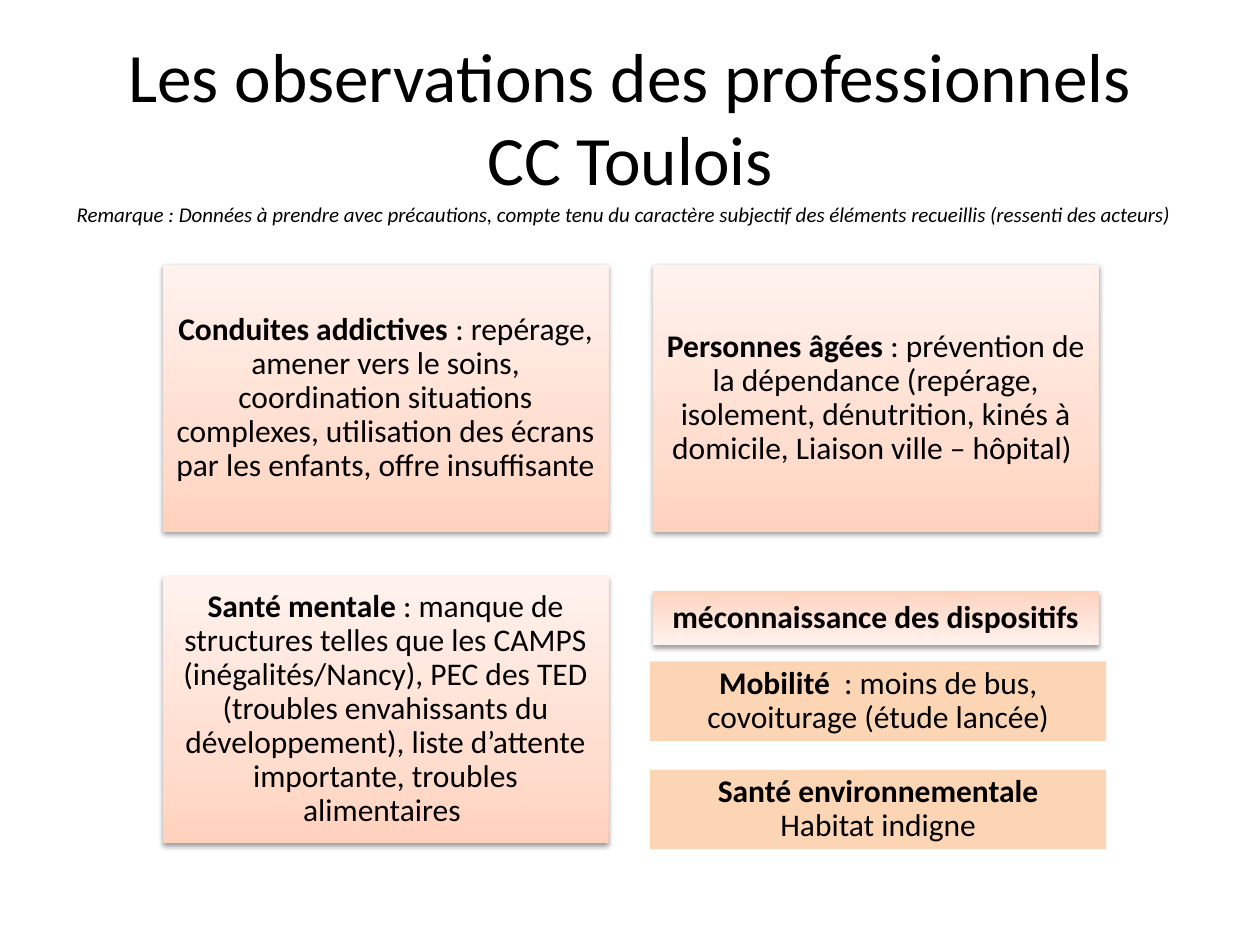
from lxml import etree
from pptx import Presentation, util as u
from pptx.dml.color import RGBColor
from pptx.enum import shapes, text
from pptx.oxml.ns import qn

TITLE = "Les observations des professionnels\vCC Toulois"
REMARK = ("Remarque : Données à prendre avec précautions, compte tenu du caractère "
          "subjectif des éléments recueillis (ressenti des acteurs)")

# column, row, bold heading, remaining text
CARDS = [
    (0, 0, "Conduites addictives ",
     ": repérage, amener vers le soins, coordination situations complexes, "
     "utilisation des écrans par les enfants, offre insuffisante"),
    (1, 0, "Personnes âgées ",
     ": prévention de la dépendance (repérage, isolement, dénutrition, "
     "kinés à domicile, Liaison ville – hôpital) "),
    (0, 1, "Santé mentale ",
     ": manque de structures telles que les CAMPS (inégalités/Nancy), PEC des TED "
     "(troubles envahissants du développement), liste d’attente importante, "
     "troubles alimentaires "),
]
AWARENESS = "méconnaissance des dispositifs"
# heading, whether the rest starts on a new line, remaining text
NOTES = [
    ("Mobilité", False, "  : moins de bus, covoiturage (étude lancée)"),
    ("Santé environnementale", True, "Habitat indigne"),
]

FONT, BLACK, PEACH = "Calibri", "000000", "FCD5B5"
GRADIENT = [(0, "FFD2BD"), (35, "FFDED0"), (100, "FFF2ED")]
LEFT, TOP, CARD_W, CARD_H, GAP = 1.29, 2.1, 3.54, 2.12, 0.35
RIGHT = LEFT + CARD_W + GAP
NOTE_TOP, NOTE_PITCH = 5.25, 0.86

deck = Presentation()
deck.slide_width, deck.slide_height = u.Inches(10), u.Inches(7.5)
page = deck.slides.add_slide(deck.slide_layouts[6])


def inches(*values):
    return [u.Inches(value) for value in values]


def style(font, size, bold=False, italic=False):
    font.name, font.size = FONT, u.Pt(size)
    font.bold, font.italic = bold, italic
    font.color.rgb = RGBColor.from_string(BLACK)


def add_label(place, words, size, align, anchor, italic=False):
    frame = page.shapes.add_textbox(*inches(*place)).text_frame
    frame.word_wrap = True
    frame.vertical_anchor = anchor
    para = frame.paragraphs[0]
    para.text, para.alignment = words, align
    for span in para.runs:
        style(span.font, size, italic=italic)


def add_panel(place, inset, heading, rest="", new_line=False):
    """Add a borderless rectangle with a bold heading and plain text."""
    box = page.shapes.add_shape(shapes.MSO_SHAPE.RECTANGLE, *inches(*place))
    box.shadow.inherit = False
    box.line.fill.background()
    frame = box.text_frame
    frame.word_wrap = True
    frame.vertical_anchor = text.MSO_ANCHOR.MIDDLE
    frame.margin_left = frame.margin_right = u.Inches(inset)
    frame.margin_top = frame.margin_bottom = u.Inches(inset)
    para = frame.paragraphs[0]
    para.alignment, para.line_spacing = text.PP_ALIGN.CENTER, 0.9
    for words, bold in ((heading, True), (rest, False)):
        if not words:
            continue
        if new_line and not bold:
            para.add_line_break()
        span = para.add_run()
        span.text = words
        style(span.font, 18, bold)
    return box


def add_color(parent, color):
    return etree.SubElement(parent, qn("a:srgbClr"), val=color)


def add_card(place, heading, rest="", angle=90):
    """Add a panel with a gradient and a soft shadow below."""
    box = add_panel(place, 0.07, heading, rest)
    box.fill.gradient()
    box.fill.gradient_angle = angle
    properties = box._element.spPr
    stops = properties.find(".//" + qn("a:gsLst"))
    for stop in list(stops):
        stops.remove(stop)
    for share, color in GRADIENT:
        add_color(etree.SubElement(stops, qn("a:gs"), pos=str(share * 1000)), color)
    shadow = etree.SubElement(
        properties.find(qn("a:effectLst")), qn("a:outerShdw"),
        blurRad=str(u.Pt(3.1)), dist=str(u.Pt(1.6)), dir="5400000", rotWithShape="0")
    etree.SubElement(add_color(shadow, BLACK), qn("a:alpha"), val="38000")


add_label((0.5, 0.3, 9, 1.25), TITLE, 39.6,
          text.PP_ALIGN.CENTER, text.MSO_ANCHOR.MIDDLE)

for column, row, heading, rest in CARDS:
    add_card((LEFT + column * (CARD_W + GAP), TOP + row * (CARD_H + GAP),
              CARD_W, CARD_H), heading, rest)
add_card((RIGHT, 4.69, CARD_W, 0.43), AWARENESS, angle=270)

for index, (heading, new_line, rest) in enumerate(NOTES):
    note = add_panel((5.16, NOTE_TOP + index * NOTE_PITCH, 3.62, 0.63),
                     0.08, heading, rest, new_line)
    note.fill.solid()
    note.fill.fore_color.rgb = RGBColor.from_string(PEACH)

add_label((0.51, 1.55, 9.06, 0.3), REMARK, 12,
          text.PP_ALIGN.LEFT, text.MSO_ANCHOR.TOP, italic=True)

deck.save("out.pptx")
